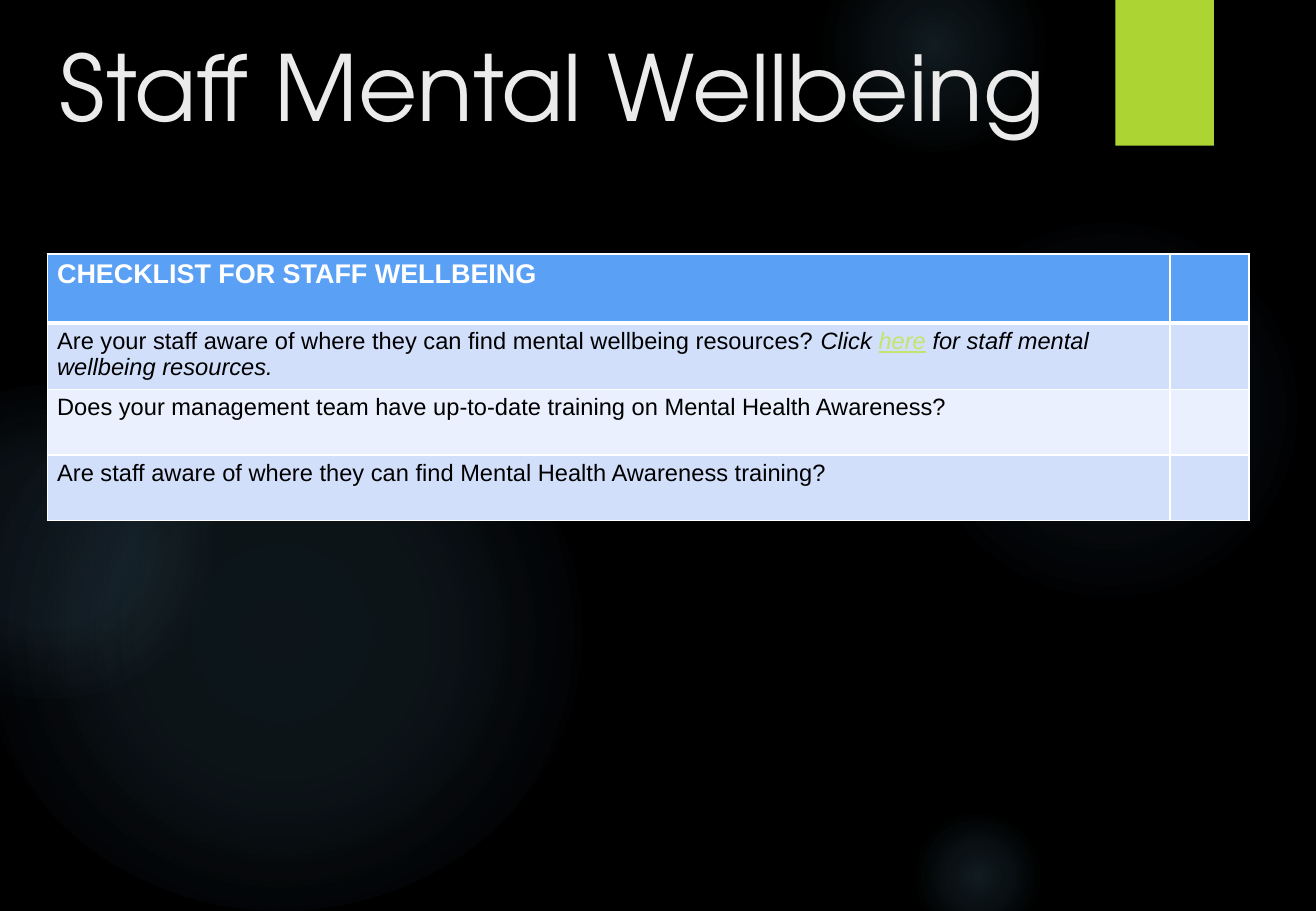
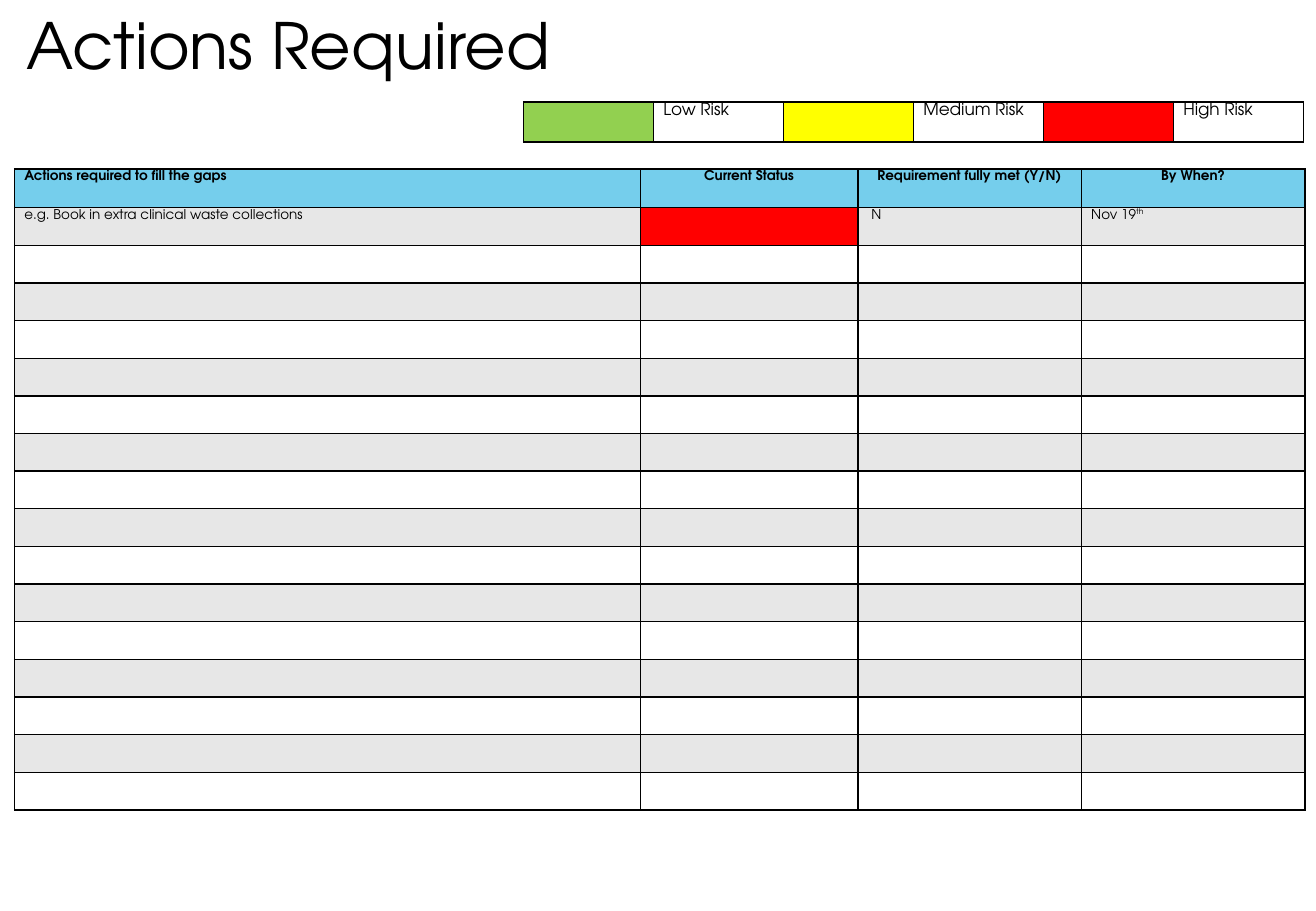
from dataclasses import dataclass

from lxml import etree
from pptx import Presentation
from pptx.dml.color import RGBColor
from pptx.enum.shapes import MSO_SHAPE
from pptx.enum.text import MSO_ANCHOR, PP_ALIGN
from pptx.oxml import parse_xml
from pptx.oxml.ns import nsdecls, qn
from pptx.util import Inches, Pt

OVAL = MSO_SHAPE.OVAL
RECTANGLE = MSO_SHAPE.RECTANGLE
TOP = MSO_ANCHOR.TOP
LEFT = PP_ALIGN.LEFT
CENTER = PP_ALIGN.CENTER


@dataclass(frozen=True)
class Theme:
    display: str = "TeX Gyre Adventor"
    body: str = "Arial"
    black: str = "000000"
    white: str = "FFFFFF"
    title: str = "EBEBEB"
    glow: str = "7AC4F0"
    accent: str = "ACD433"
    link: str = "C4E46E"
    checklist_head: str = "5AA0F5"
    checklist_odd: str = "D2DFFB"
    checklist_even: str = "EAF0FD"
    actions_head: str = "75CEEC"
    actions_band: str = "E7E7E7"
    low: str = "92D050"
    medium: str = "FFFF00"
    high: str = "FF0000"
    title_size: float = 54
    actions_title_size: float = 37.8
    checklist_head_size: float = 16
    checklist_size: float = 14
    legend_size: float = 10
    actions_size: float = 8


THEME = Theme()


def rgb(color):
    return RGBColor.from_string(color)


class Deck:
    def __init__(self, width, height):
        self.presentation = Presentation()
        self.presentation.slide_width = Inches(width)
        self.presentation.slide_height = Inches(height)
        self.slide = None

    def add_slide(self, background):
        self.slide = self.presentation.slides.add_slide(self.presentation.slide_layouts[6])
        fill = self.slide.background.fill
        fill.solid()
        fill.fore_color.rgb = rgb(background)

    def plain_shape(self, kind, box):
        shape = self.slide.shapes.add_shape(kind, *map(Inches, box))
        shape.shadow.inherit = False
        shape.line.fill.background()
        return shape

    def glow(self, box, stops):
        properties = self.plain_shape(OVAL, box)._element.spPr
        stop_xml = "".join(
            f'<a:gs pos="{position * 1000}"><a:srgbClr val="{THEME.glow}">'
            f'<a:alpha val="{alpha * 1000}"/></a:srgbClr></a:gs>'
            for position, alpha in stops
        )
        gradient = parse_xml(
            f'<a:gradFill {nsdecls("a")} rotWithShape="1"><a:gsLst>{stop_xml}</a:gsLst>'
            '<a:path path="circle"><a:fillToRect l="50000" t="50000" r="50000" b="50000"/>'
            "</a:path></a:gradFill>"
        )
        properties.find(qn("a:prstGeom")).addnext(gradient)

    def accent_tab(self, box):
        tab = self.plain_shape(RECTANGLE, box)
        tab.fill.solid()
        tab.fill.fore_color.rgb = rgb(THEME.accent)
        tab._element.spPr.find(qn("a:effectLst")).append(parse_xml(
            f'<a:outerShdw {nsdecls("a")} blurRad="{Pt(3)}" dist="{Pt(2)}" dir="5400000">'
            f'<a:srgbClr val="{THEME.black}"><a:alpha val="45000"/></a:srgbClr></a:outerShdw>'
        ))

    def title(self, text, box, size, color):
        frame = self.slide.shapes.add_textbox(*map(Inches, box)).text_frame
        frame.word_wrap = True
        frame.vertical_anchor = TOP
        self.fill_text(frame, text, THEME.display, size, color)

    def fill_text(self, frame, content, face, size, color, bold=False, align=LEFT):
        paragraph = frame.paragraphs[0]
        paragraph.alignment = align
        font = paragraph.font
        font.name, font.size, font.bold = face, Pt(size), bold
        font.color.rgb = rgb(color)
        if not content:
            end = etree.SubElement(paragraph._p, qn("a:endParaRPr"))
            end.set("sz", str(int(size * 100)))
            return
        pieces = [(content, {})] if isinstance(content, str) else content
        for text, style in pieces:
            run = paragraph.add_run()
            run.text = text
            if "italic" in style:
                run.font.italic = style["italic"]
            if "link" in style:
                run.font.underline = True
                run.font.color.rgb = rgb(THEME.link)
            if "raised" in style:
                run._r.get_or_add_rPr().set("baseline", "30000")

    def table(self, left, top, columns, rows):
        frame = self.slide.shapes.add_table(
            len(rows), len(columns), Inches(left), Inches(top),
            Inches(sum(columns)), Inches(sum(rows)),
        )
        table = frame.table
        for column, width in zip(table.columns, columns):
            column.width = Inches(width)
        for row, height in zip(table.rows, rows):
            row.height = Inches(height)
        return table

    def cell(self, cell, content, fill, border, face, size, color=THEME.black,
             bold=False, align=LEFT, inset=0.04, top_line=1, bottom_line=1):
        cell.margin_left = cell.margin_right = Inches(0.08)
        cell.margin_top = Inches(inset)
        cell.margin_bottom = Inches(0.04)
        cell.fill.solid()
        cell.fill.fore_color.rgb = rgb(fill)
        sides = {"lnL": 1, "lnR": 1, "lnT": top_line, "lnB": bottom_line}
        for index, (side, width) in enumerate(sides.items()):
            cell._tc.get_or_add_tcPr().insert(index, parse_xml(
                f'<a:{side} {nsdecls("a")} w="{Pt(width)}"><a:solidFill>'
                f'<a:srgbClr val="{border}"/></a:solidFill></a:{side}>'
            ))
        self.fill_text(cell.text_frame, content, face, size, color, bold, align)


def build_wellbeing(deck):
    deck.add_slide(THEME.black)
    for box, stops in (
        ((7.46, 1.83, 3.34, 3.08), ((0, 7), (36, 6), (69, 0))),
        ((6.74, -0.5, 1.9, 1.75), ((0, 14), (36, 7), (73, 0))),
        ((7.46, 6.67, 1.17, 1.08), ((0, 14), (36, 7), (66, 0))),
        ((-0.18, 2.92, 4.97, 4.58), ((0, 11), (36, 10), (75, 0))),
        ((-0.99, 3.17, 2.8, 2.58), ((0, 8), (36, 8), (72, 0))),
    ):
        deck.glow(box, stops)
    deck.accent_tab((9.18, 0, 0.81, 1.2))
    deck.title("Staff Mental Wellbeing", (0.39, 0.2, 9.49, 1.1), THEME.title_size, THEME.title)

    questions = (
        "CHECKLIST FOR STAFF WELLBEING",
        (
            ("Are your staff aware of where they can find mental wellbeing resources? ", {}),
            ("Click ", {"italic": True}),
            ("here", {"italic": True, "link": True}),
            (" for staff mental wellbeing resources.", {"italic": True}),
        ),
        "Does your management team have up-to-date training on Mental Health Awareness?",
        "Are staff aware of where they can find Mental Health Awareness training?",
    )
    checklist = deck.table(0.39, 2.09, (9.24, 0.65), (0.57, 0.54, 0.54, 0.54))
    for row, question in enumerate(questions):
        head = row == 0
        band = THEME.checklist_odd if row % 2 else THEME.checklist_even
        for column, content in enumerate((question, "")):
            deck.cell(
                checklist.cell(row, column), content,
                THEME.checklist_head if head else band, THEME.white, THEME.body,
                THEME.checklist_head_size if head else THEME.checklist_size,
                color=THEME.white if head else THEME.black, bold=head,
                top_line=3 if row == 1 else 1, bottom_line=3 if head else 1,
            )


def build_actions(deck):
    deck.add_slide(THEME.white)
    deck.title("Actions Required", (0.12, 0, 6.06, 0.56), THEME.actions_title_size, THEME.black)

    headings = ("Actions required to fill the gaps", "Current Status",
                "Requirement fully met (Y/N)", "By When?")
    example = ("e.g. Book in extra clinical waste collections", "", " N",
               (("Nov 19", {}), ("th", {"raised": True})))
    blank_rows = 15
    entries = (headings, example) + (("",) * len(headings),) * blank_rows
    actions = deck.table(0.12, 1.39, (5.15, 1.79, 1.84, 1.84),
                         (0.32,) + (0.31,) * (len(entries) - 1))
    for row, entry in enumerate(entries):
        head = row == 0
        band = THEME.actions_band if row % 2 else THEME.white
        for column, content in enumerate(entry):
            fill = THEME.actions_head if head else band
            if (row, column) == (1, 1):
                fill = THEME.high
            deck.cell(
                actions.cell(row, column), content, fill, THEME.black, THEME.display,
                THEME.actions_size, bold=head,
                align=CENTER if head and column else LEFT, inset=0.01,
            )

    risks = (("Low Risk", THEME.low), ("Medium Risk", THEME.medium), ("High Risk", THEME.high))
    legend = deck.table(4.31, 0.84, (1.07,) * (2 * len(risks)), (0.33,))
    for index, (label, color) in enumerate(risks):
        for offset, (content, fill) in enumerate((("", color), (label, THEME.white))):
            deck.cell(legend.cell(0, 2 * index + offset), content, fill, THEME.black,
                      THEME.display, THEME.legend_size, inset=0.01)


def main():
    deck = Deck(10.83, 7.5)
    build_wellbeing(deck)
    build_actions(deck)
    deck.presentation.save("out.pptx")


if __name__ == "__main__":
    main()
